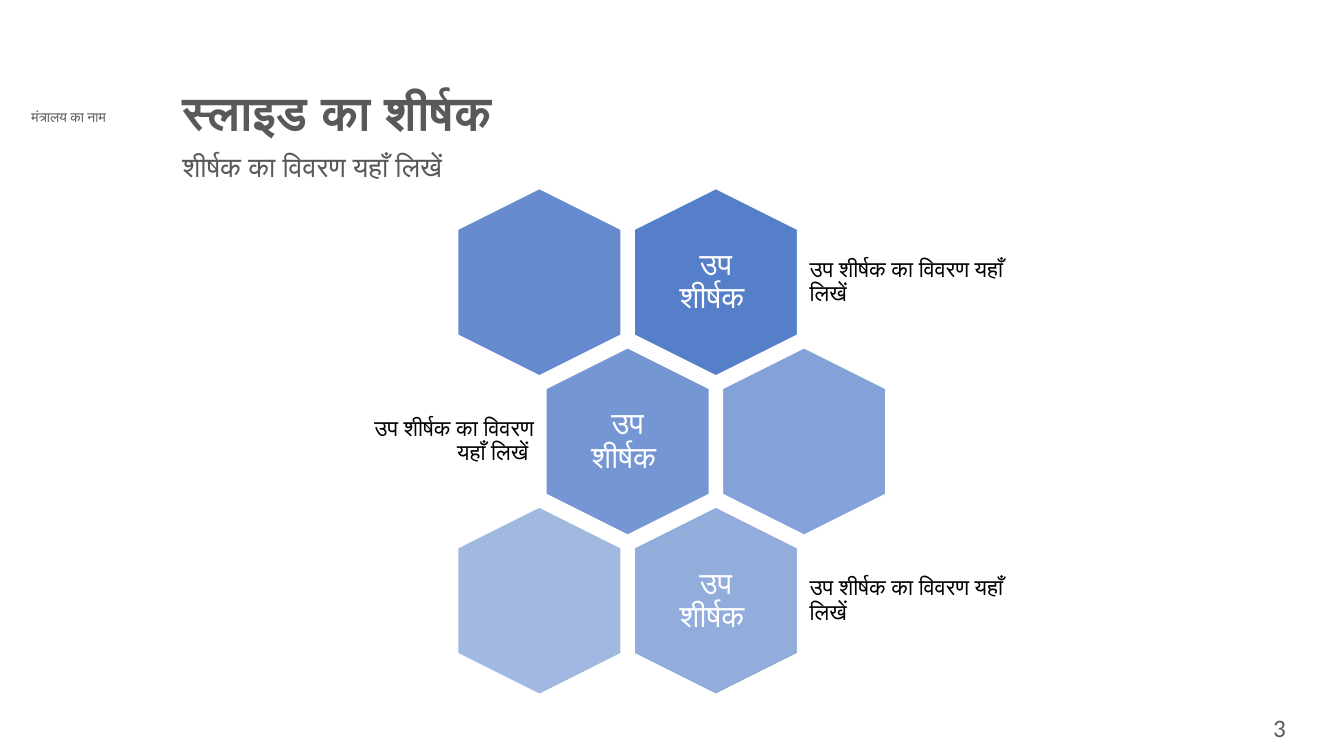
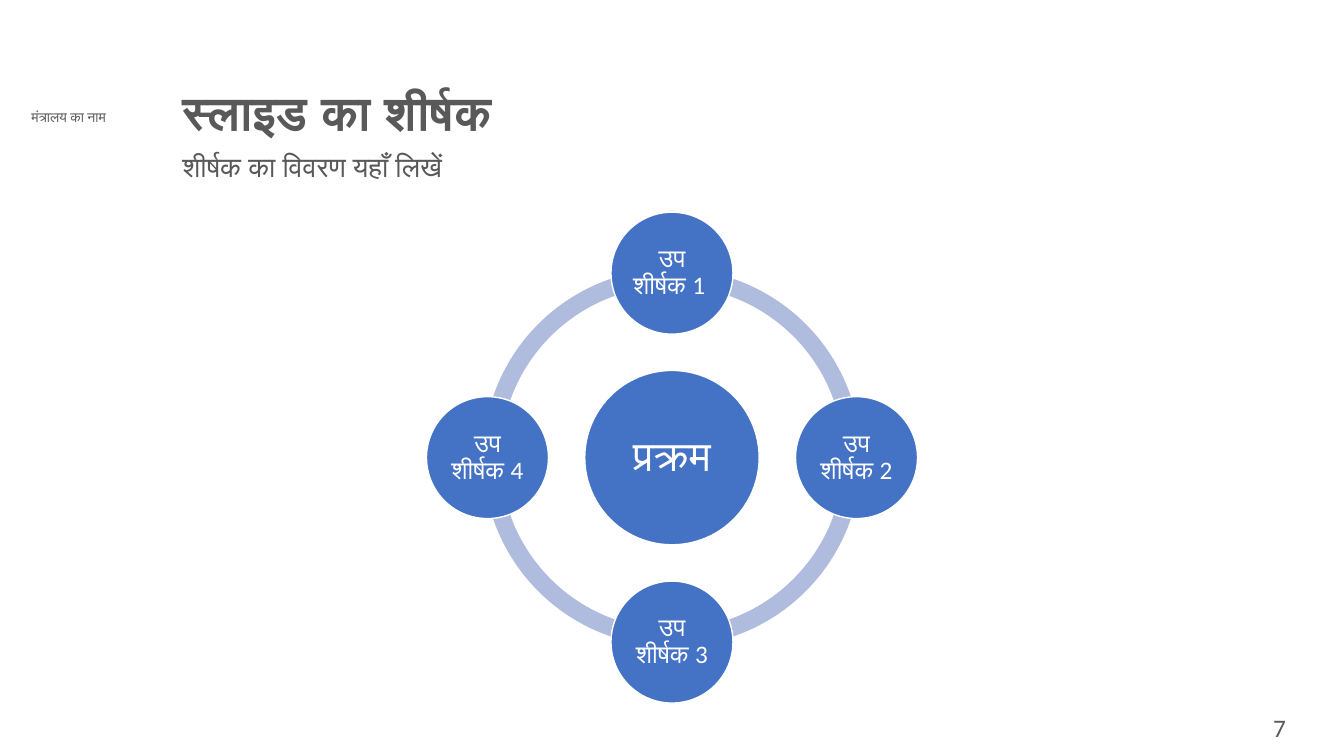
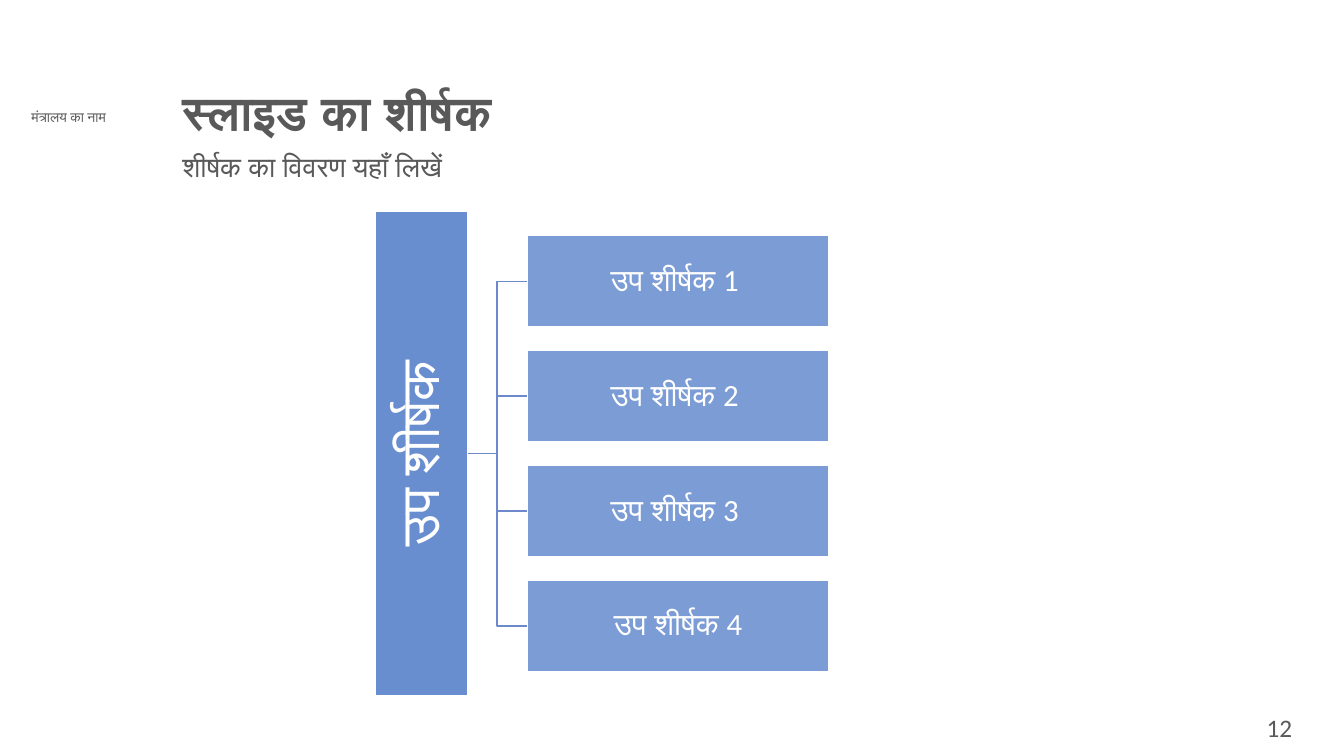
from dataclasses import dataclass
from math import cos, radians, sin

from lxml.etree import SubElement
from pptx import Presentation
from pptx.dml.color import RGBColor
from pptx.enum.shapes import MSO_SHAPE
from pptx.enum.text import MSO_ANCHOR, PP_ALIGN
from pptx.oxml.ns import qn
from pptx.presentation import Presentation as Deck
from pptx.shapes.autoshape import Shape
from pptx.slide import Slide
from pptx.util import Inches, Pt

FONT = "Calibri"
COLORS = {
    "white": "FFFFFF",
    "black": "000000",
    "grey": "595959",
    "blue": "4472C4",
    "ring": "B0BCDE",
    "branch": "6D89CB",
}
SLIDE_WIDTH, SLIDE_HEIGHT = 13.33, 7.5
LINE_SPACING = 0.9


@dataclass(frozen=True)
class Area:
    left: float
    top: float
    width: float
    height: float

    @classmethod
    def around(cls, x: float, y: float, width: float, height: float) -> "Area":
        return cls(x - width / 2, y - height / 2, width, height)

    def lengths(self) -> tuple:
        return tuple(Inches(n) for n in (self.left, self.top, self.width, self.height))


@dataclass(frozen=True)
class Cell:
    """A hexagon of the honeycomb; side tells where its caption stands, if any."""
    column: float
    row: int
    opacity: int
    side: str = ""


def color(name: str) -> RGBColor:
    return RGBColor.from_string(COLORS[name])


def write(box: Shape, text: str, *, size: float, ink: str = "white", bold: bool = False,
          align: PP_ALIGN = PP_ALIGN.CENTER, anchor: MSO_ANCHOR = MSO_ANCHOR.MIDDLE,
          spacing: float = LINE_SPACING, inset: float | None = None) -> None:
    frame = box.text_frame
    frame.word_wrap = True
    frame.vertical_anchor = anchor
    if inset is not None:
        frame.margin_left = frame.margin_right = Inches(inset)
        frame.margin_top = frame.margin_bottom = Inches(inset)
    para = frame.paragraphs[0]
    para.alignment = align
    para.line_spacing = spacing
    span = para.add_run()
    span.text = text
    span.font.name = FONT
    span.font.size = Pt(size)
    span.font.bold = bold
    span.font.color.rgb = color(ink)


def add_text(page: Slide, area: Area, text: str, **style) -> None:
    write(page.shapes.add_textbox(*area.lengths()), text, **style)


def add_figure(page: Slide, kind: MSO_SHAPE, area: Area, *, fill: str = "blue",
               opacity: int = 100, outlined: bool = True, turn: float = 0) -> Shape:
    figure = page.shapes.add_shape(kind, *area.lengths())
    figure.shadow.inherit = False
    figure.rotation = turn
    figure.fill.solid()
    figure.fill.fore_color.rgb = color(fill)
    if opacity < 100:
        tint = figure.fill._xPr.find(f"{qn('a:solidFill')}/{qn('a:srgbClr')}")
        SubElement(tint, qn("a:alpha")).set("val", str(opacity * 1000))
    if outlined:
        figure.line.color.rgb = color("white")
        figure.line.width = Pt(1)
    else:
        figure.line.fill.background()
    return figure


def add_page(deck: Deck, number: int) -> Slide:
    """Add a slide with the ministry name, title, subtitle and page number."""
    page = deck.slides.add_slide(deck.slide_layouts[6])
    plain = {"ink": "grey", "anchor": MSO_ANCHOR.TOP}
    add_text(page, Area(0.03, 1.03, 1.3, 0.27), "मंत्रालय का नाम", size=10, spacing=1, **plain)
    add_text(page, Area(1.71, 0.84, 9.61, 0.55), "स्लाइड का शीर्षक", size=34, bold=True,
             align=PP_ALIGN.LEFT, **plain)
    add_text(page, Area(1.71, 1.47, 9.61, 0.63), "शीर्षक का विवरण यहाँ लिखें", size=20,
             align=PP_ALIGN.LEFT, **plain)
    add_text(page, Area(12.1, 7.02, 1.18, 0.45), str(number), size=18, spacing=1, **plain)
    return page


def draw_honeycomb(page: Slide) -> None:
    first_x, first_y = 5.35, 2.8
    column_pitch, row_pitch = 1.75, 1.58
    caption_gap = 0.86
    cells = (
        Cell(1, 0, 90, "right"), Cell(0, 0, 82),
        Cell(0.5, 1, 74, "left"), Cell(1.5, 1, 66),
        Cell(1, 2, 58, "right"), Cell(0, 2, 50),
    )
    for cell in cells:
        x = first_x + cell.column * column_pitch
        y = first_y + cell.row * row_pitch
        hexagon = add_figure(page, MSO_SHAPE.HEXAGON, Area.around(x, y, 1.86, 1.62),
                             opacity=cell.opacity, turn=90)
        hexagon.adjustments[0] = 0.25
        if not cell.side:
            continue
        add_text(page, Area.around(x, y, 1.12, 1.28), "उप शीर्षक ", size=22, inset=0.09)
        caption = "उप शीर्षक का विवरण यहाँ लिखें"
        if cell.side == "right":
            left, width, align = x + caption_gap, 2.08, PP_ALIGN.LEFT
        else:
            width, align = 2.01, PP_ALIGN.RIGHT
            left = x - caption_gap - width
            caption += " "
        add_text(page, Area(left, y - 0.56, width, 1.12), caption, size=16, ink="black",
                 align=align, inset=0.07)


def draw_cycle(page: Slide) -> None:
    x, y, orbit = SLIDE_WIDTH / 2, 4.54, 1.83
    for start in (180, 90, 0, 270):
        arc = add_figure(page, MSO_SHAPE.BLOCK_ARC, Area.around(x, y, 3.75, 3.75),
                         fill="ring", outlined=False)
        # Angles are stored in 60000ths of a degree, adjustments in 100000ths.
        arc.adjustments[0] = start * 0.6
        arc.adjustments[1] = (start + 90) % 360 * 0.6
        arc.adjustments[2] = 0.046
    hub = add_figure(page, MSO_SHAPE.OVAL, Area.around(x, y, 1.73, 1.73))
    write(hub, "प्रक्रम", size=30, inset=0.04)
    labels = ("उप शीर्षक 1 ", "उप शीर्षक 2", "उप शीर्षक 3", "उप शीर्षक 4")
    for index, label in enumerate(labels):
        angle = radians(index * 360 / len(labels) - 90)
        area = Area.around(x + orbit * cos(angle), y + orbit * sin(angle), 1.21, 1.21)
        write(add_figure(page, MSO_SHAPE.OVAL, area), label, size=18, inset=0.03)


def draw_branch(page: Slide, points: tuple) -> None:
    start, *rest = [(Inches(x), Inches(y)) for x, y in points]
    builder = page.shapes.build_freeform(*start)
    builder.add_line_segments(rest, close=False)
    branch = builder.convert_to_shape()
    branch.shadow.inherit = False
    branch.fill.background()
    branch.line.color.rgb = color("branch")
    branch.line.width = Pt(1)


def draw_tree(page: Slide) -> None:
    root_x, root_y, thickness = 4.18, 4.5, 0.91
    trunk_x, spine_x, leaf_x = 4.64, 4.93, 5.23
    labels = ("उप शीर्षक 1 ", "उप शीर्षक 2 ", "उप शीर्षक 3 ", "उप शीर्षक 4")
    pitch = 1.14
    rows = [root_y + (index - (len(labels) - 1) / 2) * pitch for index in range(len(labels))]
    for y in rows:
        draw_branch(page, ((trunk_x, root_y), (spine_x, root_y), (spine_x, y), (leaf_x, y)))
    root = add_figure(page, MSO_SHAPE.RECTANGLE, Area.around(root_x, root_y, 4.8, thickness),
                      opacity=80, turn=270)
    write(root, "उप शीर्षक", size=39, inset=0.03)
    for y, label in zip(rows, labels):
        leaf = add_figure(page, MSO_SHAPE.RECTANGLE,
                          Area(leaf_x, y - thickness / 2, 2.99, thickness), opacity=70)
        write(leaf, label, size=22, inset=0.02)


def main() -> None:
    deck = Presentation()
    deck.slide_width = Inches(SLIDE_WIDTH)
    deck.slide_height = Inches(SLIDE_HEIGHT)
    draw_honeycomb(add_page(deck, 3))
    draw_cycle(add_page(deck, 7))
    draw_tree(add_page(deck, 12))
    deck.save("out.pptx")


if __name__ == "__main__":
    main()
